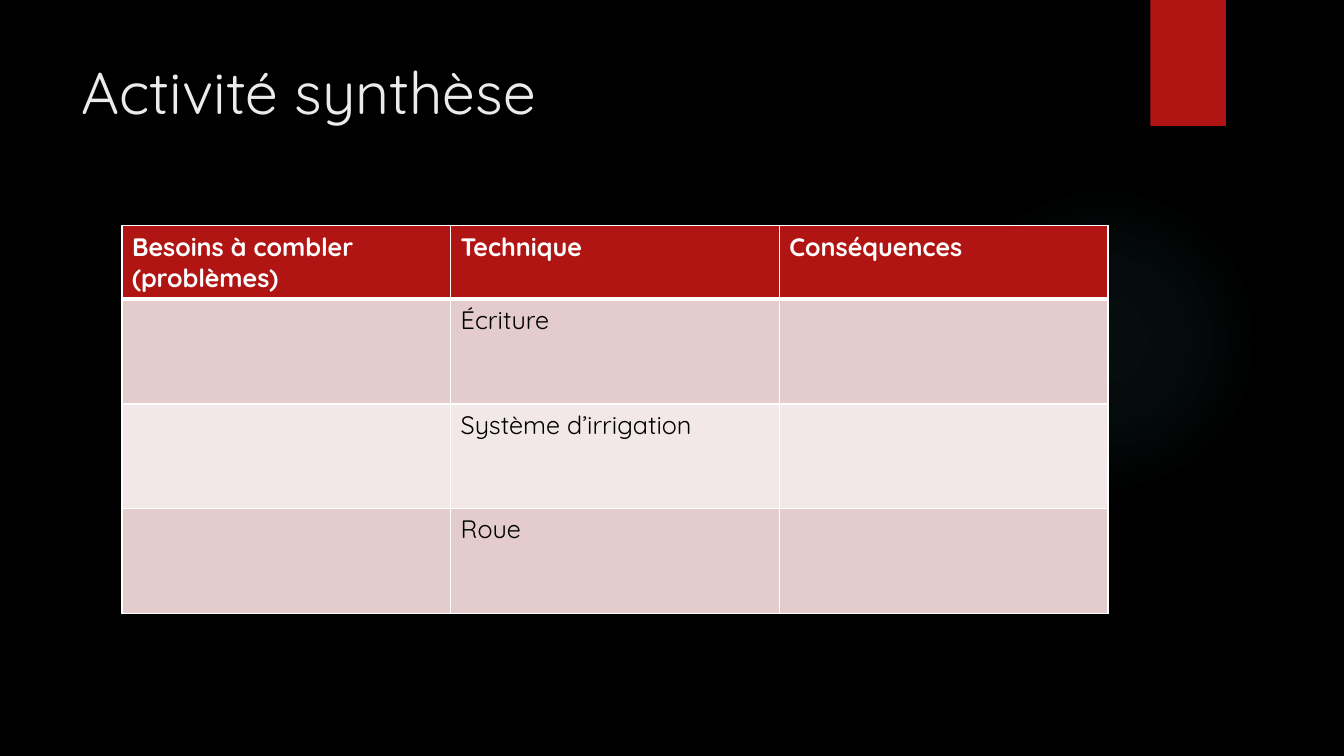
from dataclasses import dataclass

from lxml.etree import SubElement
from pptx import Presentation
from pptx.dml.color import RGBColor
from pptx.enum.shapes import MSO_SHAPE as Shape
from pptx.enum.text import MSO_ANCHOR as Anchor, PP_ALIGN as Align
from pptx.oxml.ns import qn
from pptx.util import Inches, Pt

FONT = "Quicksand"
RED, WHITE, BLACK = "B01513", "FFFFFF", "000000"


@dataclass
class Decoration:
    kind: Shape
    left: float
    top: float
    width: float
    height: float
    color: str


@dataclass
class RowStyle:
    height: float
    fill: str
    color: str
    bold: bool
    top_line: float
    bottom_line: float


GLOW = Decoration(Shape.OVAL, 9.41, 1.83, 3.08, 3.08, "50B9C1")
RIBBON = Decoration(Shape.RECTANGLE, 11.41, 0, 0.75, 1.25, RED)
GLOW_STOPS = [(0, 7), (36, 6), (69, 0)]  # position and opacity, in percent

ROWS = [
    ["Besoins à combler (problèmes)", "Technique", "Conséquences"],
    ["", "Écriture", ""],
    ["", "Système d’irrigation", ""],
    ["", "Roue", ""],
]
STYLES = [
    RowStyle(0.72, RED, WHITE, True, 1, 3),
    RowStyle(1.04, "E4CCCC", BLACK, False, 3, 1),
    RowStyle(1.04, "F2E8E7", BLACK, False, 1, 1),
    RowStyle(1.04, "E4CCCC", BLACK, False, 1, 1),
]
COLUMN_WIDTH = 3.26


def rgb(color: str) -> RGBColor:
    return RGBColor.from_string(color)


def format_text(frame, size: float, color: str, bold: bool = False) -> None:
    for para in frame.paragraphs:
        para.alignment = Align.LEFT
        para.font.size = Pt(size)
        for span in para.runs:
            span.font.name = FONT
            span.font.size = Pt(size)
            span.font.bold = bold
            span.font.color.rgb = rgb(color)


def add_decoration(page, item: Decoration):
    shape = page.shapes.add_shape(
        item.kind, Inches(item.left), Inches(item.top),
        Inches(item.width), Inches(item.height))
    shape.shadow.inherit = False
    shape.line.fill.background()
    shape.fill.solid()
    shape.fill.fore_color.rgb = rgb(item.color)
    page.shapes.title._element.addprevious(shape._element)
    return shape


def set_glow(shape, color: str) -> None:
    """Replace the solid fill with a fading radial gradient."""
    solid = shape._element.spPr.find(qn("a:solidFill"))
    gradient = SubElement(shape._element.spPr, qn("a:gradFill"))
    stops = SubElement(gradient, qn("a:gsLst"))
    for position, opacity in GLOW_STOPS:
        stop = SubElement(stops, qn("a:gs"), pos=str(position * 1000))
        tint = SubElement(stop, qn("a:srgbClr"), val=color)
        SubElement(tint, qn("a:alpha"), val=str(opacity * 1000))
    circle = SubElement(gradient, qn("a:path"), path="circle")
    SubElement(circle, qn("a:fillToRect"), l="50000", t="50000", r="50000", b="50000")
    solid.getparent().replace(solid, gradient)


def set_borders(cell, style: RowStyle) -> None:
    properties = cell._tc.get_or_add_tcPr()
    widths = {"lnL": 1, "lnR": 1, "lnT": style.top_line, "lnB": style.bottom_line}
    for side, width in widths.items():
        line = SubElement(properties, qn(f"a:{side}"), w=str(Pt(width)))
        fill = SubElement(line, qn("a:solidFill"))
        SubElement(fill, qn("a:srgbClr"), val=WHITE)


def add_summary_table(page) -> None:
    columns = len(ROWS[0])
    height = sum(style.height for style in STYLES)
    table = page.shapes.add_table(
        len(ROWS), columns, Inches(1.21), Inches(2.24),
        Inches(COLUMN_WIDTH * columns), Inches(height)).table
    table.first_row = table.horz_banding = False
    for column in table.columns:
        column.width = Inches(COLUMN_WIDTH)
    for row, texts, style in zip(table.rows, ROWS, STYLES):
        row.height = Inches(style.height)
        for cell, text in zip(row.cells, texts):
            set_borders(cell, style)
            cell.fill.solid()
            cell.fill.fore_color.rgb = rgb(style.fill)
            cell.text_frame.text = text
            format_text(cell.text_frame, 18, style.color, style.bold)


def main() -> None:
    deck = Presentation()
    deck.slide_width, deck.slide_height = Inches(13.33), Inches(7.5)
    page = deck.slides.add_slide(deck.slide_layouts[5])
    page.background.fill.solid()
    page.background.fill.fore_color.rgb = rgb(BLACK)

    # Background decorations
    set_glow(add_decoration(page, GLOW), GLOW.color)
    add_decoration(page, RIBBON)

    # Title
    title = page.shapes.title
    title.left, title.top = Inches(0.71), Inches(0.5)
    title.width, title.height = Inches(10.29), Inches(1.53)
    title.text_frame.text = "Activité synthèse"
    title.text_frame.vertical_anchor = Anchor.TOP
    format_text(title.text_frame, 42, "EBEBEB")

    # Table
    add_summary_table(page)
    deck.save("out.pptx")


if __name__ == "__main__":
    main()
